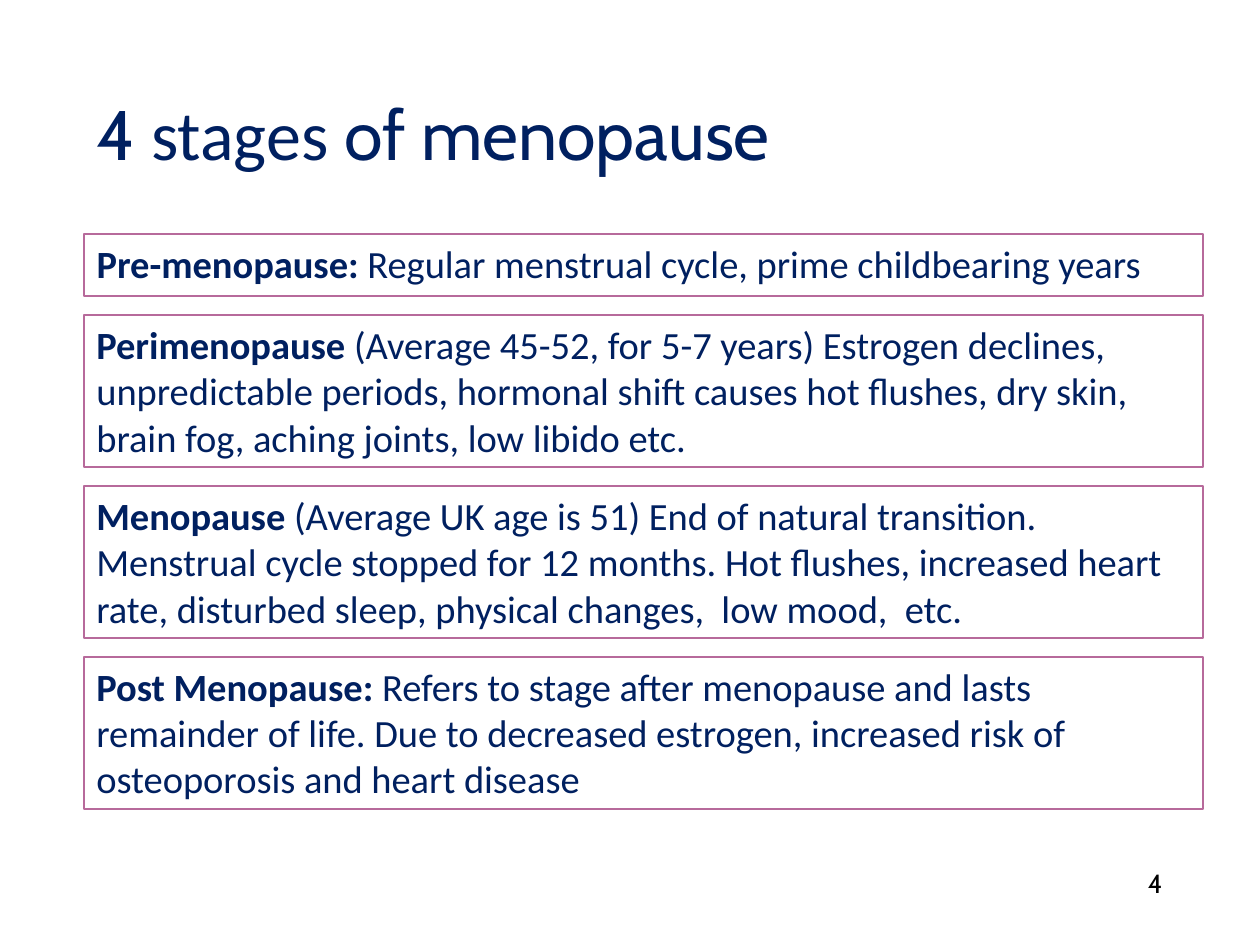
from lxml import etree
from pptx import Presentation
from pptx.dml.color import RGBColor
from pptx.enum.shapes import MSO_SHAPE
from pptx.enum.text import MSO_ANCHOR, MSO_AUTO_SIZE, PP_ALIGN
from pptx.oxml.ns import qn
from pptx.util import Pt

RECT = MSO_SHAPE.RECTANGLE
TOP, MIDDLE = MSO_ANCHOR.TOP, MSO_ANCHOR.MIDDLE
LEFT, RIGHT = PP_ALIGN.LEFT, PP_ALIGN.RIGHT
FIXED = MSO_AUTO_SIZE.NONE
SCALE = 914400 / 126
NAVY, BLACK, WHITE, PINK = "002060", "000000", "FFFFFF", "B76A9B"


def place(shape, x, y, w, h, anchor=TOP, align=LEFT):
    spots = {"left": x, "top": y, "width": w, "height": h}
    for name, value in spots.items():
        setattr(shape, name, round(value * SCALE))
    frame = shape.text_frame
    form = {"word_wrap": True, "auto_size": FIXED, "vertical_anchor": anchor}
    for name, value in form.items():
        setattr(frame, name, value)
    para = frame.paragraphs[0]
    para.alignment = align
    return para


def write(para, text, face, size, color, bold=False):
    run = para.add_run()
    run.text = text
    form = {"name": face, "size": Pt(size), "bold": bold}
    for name, value in form.items():
        setattr(run.font, name, value)
    run.font.color.rgb = RGBColor.from_string(color)


deck = Presentation()
deck.slide_width = round(1260 * SCALE)
deck.slide_height = round(945 * SCALE)
slide = deck.slides.add_slide(deck.slide_layouts[1])
title, body = slide.placeholders

para = place(title, 84, 84, 874, 181)
for text, face in [("4 ", "Cabin"), ("stages", "Calibri"), (" of menopause", "Cabin")]:
    write(para, text, face, 40, NAVY)

stages = [
    ("Pre-menopause: ", "Regular menstrual cycle, prime childbearing years", 62),
    ("Perimenopause ", "(Average 45-52, for 5-7 years) Estrogen declines, unpredictable periods, hormonal shift causes hot flushes, dry skin, brain fog, aching joints, low libido etc.", 152),
    ("Menopause ", "(Average UK age is 51) End of natural transition. Menstrual cycle stopped for 12 months. Hot flushes, increased heart rate, disturbed sleep, physical changes,  low mood,  etc.", 152),
    ("Post Menopause: ", "Refers to stage after menopause and lasts remainder of life. Due to decreased estrogen, increased risk of osteoporosis and heart disease", 152),
]
y, gap = 234, 19
for i, (name, text, high) in enumerate(stages):
    if i == 0:
        box = body
        box.fill.solid()
        box.fill.fore_color.rgb = RGBColor.from_string(WHITE)
    else:
        box = slide.shapes.add_shape(RECT, 0, 0, 0, 0)
        box.shadow.inherit = False
        box.fill.background()
    box.line.color.rgb = RGBColor.from_string(PINK)
    box.line.width = Pt(0.75)
    para = place(box, 84, y, 1119, high)
    para.space_before = Pt(0)
    if i == 0:
        props = para._p.get_or_add_pPr()
        props.set("marL", "0")
        props.set("indent", "0")
        etree.SubElement(props, qn("a:buNone"))
    write(para, name, "Calibri", 22, NAVY, True)
    write(para, text, "Calibri", 22, NAVY)
    y += high + gap

page = slide.shapes.add_textbox(0, 0, 0, 0)
para = place(page, 1105, 858, 70, 50, MIDDLE, RIGHT)
write(para, "4", "Cabin", 15, BLACK)

deck.save("out.pptx")
